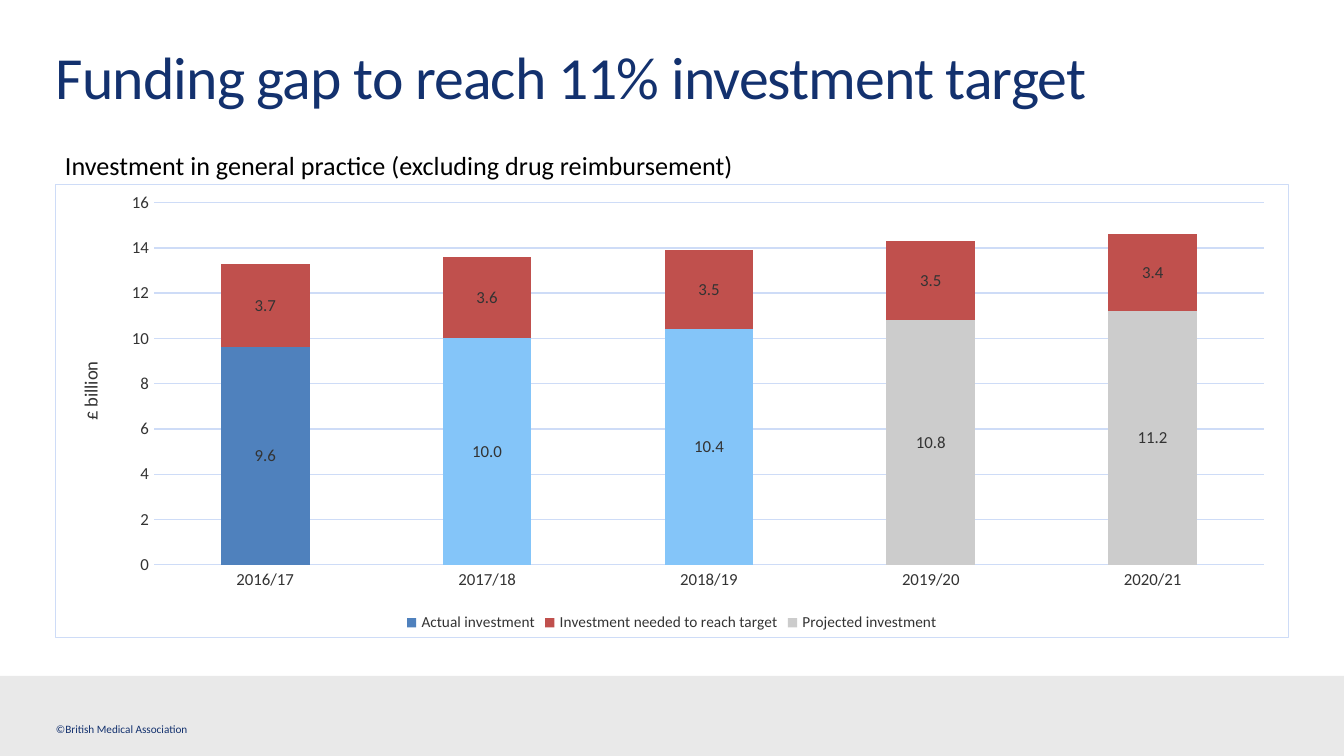
from lxml import etree
from pptx import Presentation
from pptx import util as u
from pptx.chart import data
from pptx.dml.color import RGBColor
from pptx.enum import chart as ch, shapes, text
from pptx.oxml import parse_xml

PX = 914400 / 134.4
THEME = {
    "font": "Calibri", "navy": "13316E", "black": "000000", "grey": "333333",
    "band": "E9E9E9", "rule": "CEDCF7", "white": "FFFFFF",
    "actual": "4F81BD", "recent": "84C5F9", "projected": "CCCCCC", "gap": "C0504D",
    "title": 32, "subtitle": 14, "axis_title": 10, "axis": 9, "legend": 8.2, "footer": 6,
}
NS = ('xmlns:c="http://schemas.openxmlformats.org/drawingml/2006/chart" '
      'xmlns:a="http://schemas.openxmlformats.org/drawingml/2006/main"')


def style(font, size, color):
    font.name = THEME["font"]
    font.size = u.Pt(THEME[size])
    font.bold = False
    font.color.rgb = RGBColor.from_string(THEME[color])


def add_text(words, box, *, size, color, inset=(0, 0), anchor=text.MSO_ANCHOR.TOP,
             leading=None, tracking=None):
    frame = slide.shapes.add_textbox(*[u.Emu(round(v * PX)) for v in box]).text_frame
    frame.word_wrap = True
    frame.vertical_anchor = anchor
    frame.margin_left = frame.margin_right = round(inset[0] * PX)
    frame.margin_top = frame.margin_bottom = round(inset[1] * PX)
    line = frame.paragraphs[0]
    if leading:
        line.line_spacing = u.Pt(leading)
    run = line.add_run()
    run.text = words
    style(run.font, size, color)
    if tracking:
        run.font._element.set("spc", str(tracking))


prs = Presentation()
prs.slide_width, prs.slide_height = round(1344 * PX), round(756 * PX)
slide = prs.slides.add_slide(prs.slide_layouts[6])

footer_band = slide.shapes.add_shape(
    shapes.MSO_SHAPE.RECTANGLE, *[round(v * PX) for v in (0, 676, 1344, 80)])
footer_band.shadow.inherit = False
footer_band.fill.solid()
footer_band.fill.fore_color.rgb = RGBColor.from_string(THEME["band"])
footer_band.line.fill.background()

add_text("©British Medical Association", (56, 723, 278, 13), size="footer", color="navy",
         anchor=text.MSO_ANCHOR.MIDDLE)
add_text("Funding gap to reach 11% investment target", (56, 48, 1052, 73),
         size="title", color="navy", leading=34, tracking=-50)

investment = data.CategoryChartData(number_format="0.0")
investment.categories = ["2016/17", "2017/18", "2018/19", "2019/20", "2020/21"]
investment.add_series("Actual investment", (9.6, 10, 10.4, 10.8, 11.2))
investment.add_series("Investment needed to reach target", (3.7, 3.6, 3.5, 3.5, 3.4))
investment.add_series("Projected investment", (0, None, None, None, None))
funding = slide.shapes.add_chart(
    ch.XL_CHART_TYPE.COLUMN_STACKED, *[round(v * PX) for v in (55, 184, 1234, 454)],
    investment).chart
style(funding.font, "axis_title", "black")
funding.has_title = False
funding.has_legend = True
funding.legend.position = ch.XL_LEGEND_POSITION.BOTTOM
funding.legend.include_in_layout = False
style(funding.legend.font, "legend", "grey")

years, billions = funding.category_axis, funding.value_axis
for axis in (years, billions):
    axis.major_tick_mark = axis.minor_tick_mark = ch.XL_TICK_MARK.NONE
    style(axis.tick_labels.font, "axis", "grey")
billions.minimum_scale, billions.maximum_scale, billions.major_unit = 0, 16, 2
billions.tick_labels.number_format = "General"
billions.tick_labels.number_format_is_linked = False
billions.format.line.fill.background()
for rule in (years.format.line, billions.major_gridlines.format.line):
    rule.color.rgb = RGBColor.from_string(THEME["rule"])
    rule.width = u.Pt(0.75)
unit = billions.axis_title.text_frame.paragraphs[0].add_run()
unit.text = "£ billion"
style(unit.font, "axis_title", "grey")

columns = funding.plots[0]
columns.gap_width, columns.overlap = 150, 100
columns.vary_by_categories = False
for series, color in zip(columns.series, ("actual", "gap", "projected")):
    series.invert_if_negative = False
    series.format.fill.solid()
    series.format.fill.fore_color.rgb = RGBColor.from_string(THEME[color])
    if color != "projected":
        labels = series.data_labels
        labels.show_value = True
        labels.position = ch.XL_LABEL_POSITION.CENTER
        labels.number_format = "0.0"
        labels.number_format_is_linked = False
        style(labels.font, "axis", "grey")
for year, color in enumerate(("recent", "recent", "projected", "projected"), 1):
    fill = columns.series[0].points[year].format.fill
    fill.solid()
    fill.fore_color.rgb = RGBColor.from_string(THEME[color])

root = funding.element
plot_area = root.chart.plotArea
for layout in plot_area.findall("{*}layout"):
    plot_area.remove(layout)
plot_area.insert(0, parse_xml(
    f'<c:layout {NS}><c:manualLayout><c:layoutTarget val="inner"/>'
    '<c:xMode val="edge"/><c:yMode val="edge"/><c:x val="0.08"/><c:y val="0.04"/>'
    '<c:w val="0.9"/><c:h val="0.8"/></c:manualLayout></c:layout>'))
root.chart.addnext(parse_xml(
    f'<c:spPr {NS}><a:solidFill><a:srgbClr val="{THEME["white"]}"/></a:solidFill>'
    f'<a:ln w="{u.Pt(0.75)}"><a:solidFill><a:srgbClr val="{THEME["rule"]}"/></a:solidFill>'
    '</a:ln></c:spPr>'))

add_text("Investment in general practice (excluding drug reimbursement)", (55, 144, 755, 42),
         size="subtitle", color="black", inset=(10, 5))

prs.save("out.pptx")
